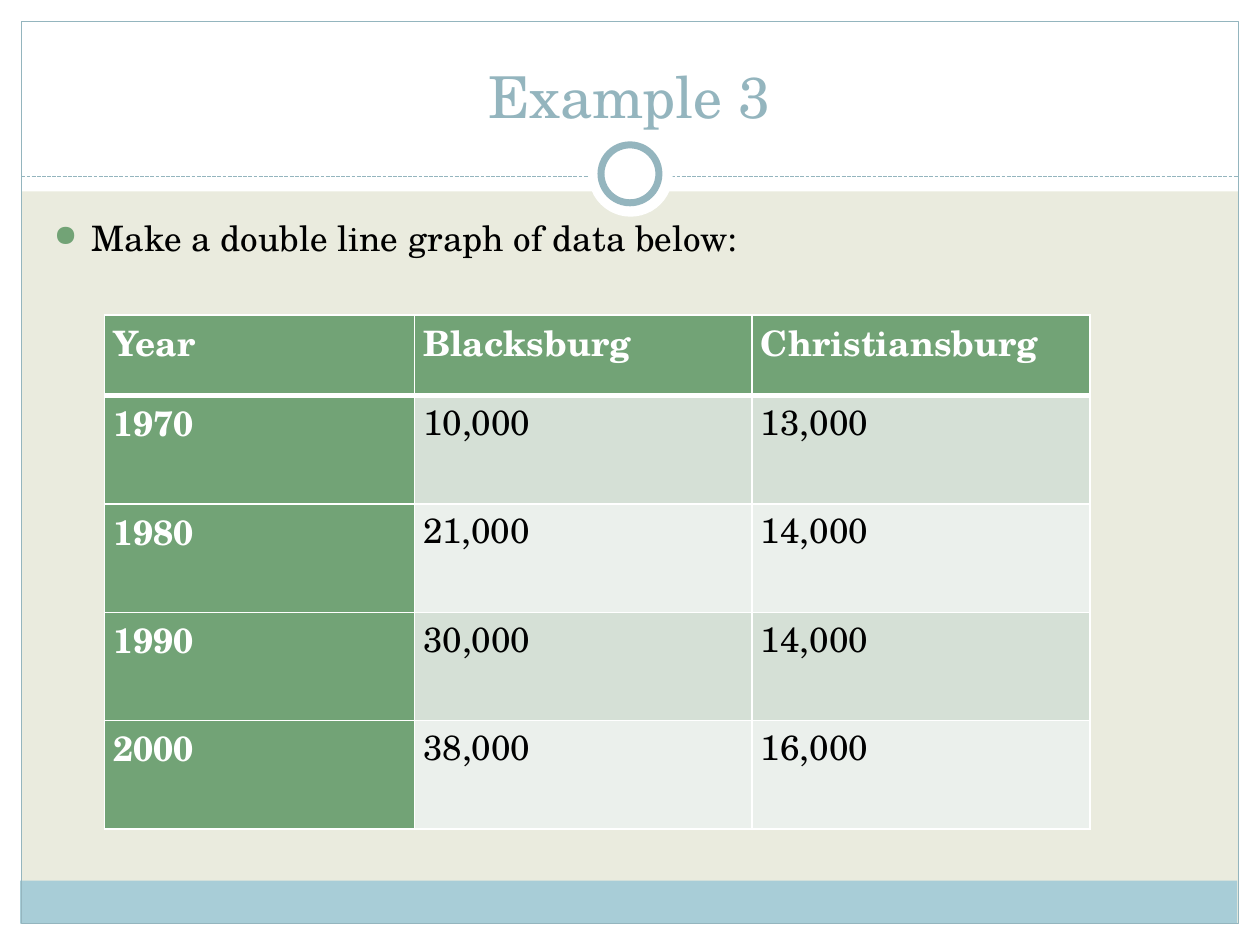
import pptx
import pptx.util
import pptx.dml.color
import pptx.enum.dml
import pptx.enum.shapes
import pptx.enum.text
import pptx.oxml
import pptx.oxml.ns
from pptx.util import Inches

SHAPE = pptx.enum.shapes.MSO_SHAPE
ALIGN = pptx.enum.text.PP_ALIGN
ANCHOR = pptx.enum.text.MSO_ANCHOR
WHITE, BLACK, GREEN, BLUE = "FFFFFF", "000000", "72A376", "94B5BE"
BANDS = ["D5E0D6", "EBF0EC"]


def color(code):
    return pptx.dml.color.RGBColor.from_string(code)


def add_xml(parent, tag, inner="", **attrs):
    text = " ".join(f'{key}="{value}"' for key, value in attrs.items())
    space = pptx.oxml.ns.nsdecls("a")
    parent.append(pptx.oxml.parse_xml(f"<a:{tag} {space} {text}>{inner}</a:{tag}>"))


class Deck:
    font = "TeX Gyre Schola"

    def __init__(self, back):
        self.file = pptx.Presentation()
        self.file.slide_width, self.file.slide_height = Inches(10), Inches(7.5)
        self.slide = self.file.slides.add_slide(self.file.slide_layouts[6])
        self.slide.background.fill.solid()
        self.slide.background.fill.fore_color.rgb = color(back)

    def shape(self, kind, box, fill=None, line=None, width=0.75):
        item = self.slide.shapes.add_shape(kind, *map(Inches, box))
        item.shadow.inherit = False
        if fill:
            item.fill.solid()
            item.fill.fore_color.rgb = color(fill)
        else:
            item.fill.background()
        if line:
            item.line.color.rgb = color(line)
            item.line.width = pptx.util.Pt(width)
        else:
            item.line.fill.background()

    def rule(self, start, end, tint):
        line = self.slide.shapes.add_connector(
            pptx.enum.shapes.MSO_CONNECTOR.STRAIGHT, *map(Inches, start + end))
        line.line.color.rgb = color(tint)
        line.line.width = pptx.util.Pt(0.75)
        line.line.dash_style = pptx.enum.dml.MSO_LINE.SQUARE_DOT
        add_xml(line._element.spPr, "effectLst")

    def style(self, para, size, tint, bold=False):
        for run in para.runs:
            run.font.name, run.font.size = self.font, pptx.util.Pt(size)
            run.font.color.rgb, run.font.bold = color(tint), bold

    def text(self, box, words, size, tint, align=ALIGN.LEFT, anchor=ANCHOR.TOP):
        frame = self.slide.shapes.add_textbox(*map(Inches, box)).text_frame
        frame.word_wrap = True
        frame.vertical_anchor = anchor
        frame.text = words
        para = frame.paragraphs[0]
        para.alignment = align
        self.style(para, size, tint)
        return para

    def bullet(self, box, words, size, tint, dot):
        para = self.text(box, words, size, tint)
        para.space_before = pptx.util.Pt(size * 0.2)
        props = para._p.get_or_add_pPr()
        props.set("marL", str(Inches(0.3)))
        props.set("indent", str(-Inches(0.3)))
        add_xml(props, "buClr", f'<a:srgbClr val="{dot}"/>')
        add_xml(props, "buSzPct", val=85000)
        add_xml(props, "buChar", char="●")

    def cell(self, cell, words, fill, tint, bold, edges):
        cell.text = words
        cell.margin_left = cell.margin_right = Inches(0.07)
        cell.margin_top = cell.margin_bottom = 0
        self.style(cell.text_frame.paragraphs[0], 20, tint, bold)
        props = cell._tc.get_or_add_tcPr()
        for side, width in edges.items():
            add_xml(props, "ln" + side,
                    f'<a:solidFill><a:srgbClr val="{WHITE}"/></a:solidFill>',
                    w=pptx.util.Pt(width))
        cell.fill.solid()
        cell.fill.fore_color.rgb = color(fill)

    def table(self, box, rows, widths, heights):
        grid = self.slide.shapes.add_table(
            len(rows), len(widths), *map(Inches, box)).table
        grid.first_col = True
        for col, width in zip(grid.columns, widths):
            col.width = Inches(width)
        for r, row in enumerate(rows):
            grid.rows[r].height = Inches(heights[r])
            edges = {"L": 1, "R": 1, "T": 3 if r == 1 else 1, "B": 1 if r else 3}
            for c, words in enumerate(row):
                head = r == 0 or c == 0
                fill = GREEN if head else BANDS[(r - 1) % 2]
                self.cell(grid.cell(r, c), words, fill,
                          WHITE if head else BLACK, head, edges)


def main():
    deck = Deck("EAEBDE")
    for box in [(0, 7.33, 10, 0.17), (0, 0, 10, 1.52),
                (0, 0, 0.17, 7.5), (9.83, 0, 0.17, 7.5)]:
        deck.shape(SHAPE.RECTANGLE, box, WHITE)
    deck.shape(SHAPE.RECTANGLE, (0.16, 6.99, 9.66, 0.34), "A8CDD7")
    deck.shape(SHAPE.RECTANGLE, (0.17, 0.17, 9.66, 7.16), line=BLUE)
    deck.rule((0.17, 1.4), (9.83, 1.4), BLUE)
    deck.shape(SHAPE.OVAL, (4.67, 1.05, 0.67, 0.67), WHITE)
    deck.shape(SHAPE.OVAL, (4.77, 1.15, 0.46, 0.46), WHITE, BLUE, 4)

    deck.text((0.33, 0.25, 9.33, 0.83), "Example 3", 33, BLUE,
              ALIGN.CENTER, ANCHOR.BOTTOM)
    deck.bullet((0.33, 1.67, 9.3, 5), "Make a double line graph of data below:",
                20, BLACK, GREEN)
    rows = [("Year", "Blacksburg", "Christiansburg"),
            ("1970", "10,000", "13,000"),
            ("1980", "21,000", "14,000"),
            ("1990", "30,000", "14,000"),
            ("2000", "38,000", "16,000")]
    deck.table((0.83, 2.5, 7.83, 4.08), rows,
               [2.46, 2.68, 2.68], [0.64] + [0.86] * 4)
    deck.file.save("out.pptx")


if __name__ == "__main__":
    main()
